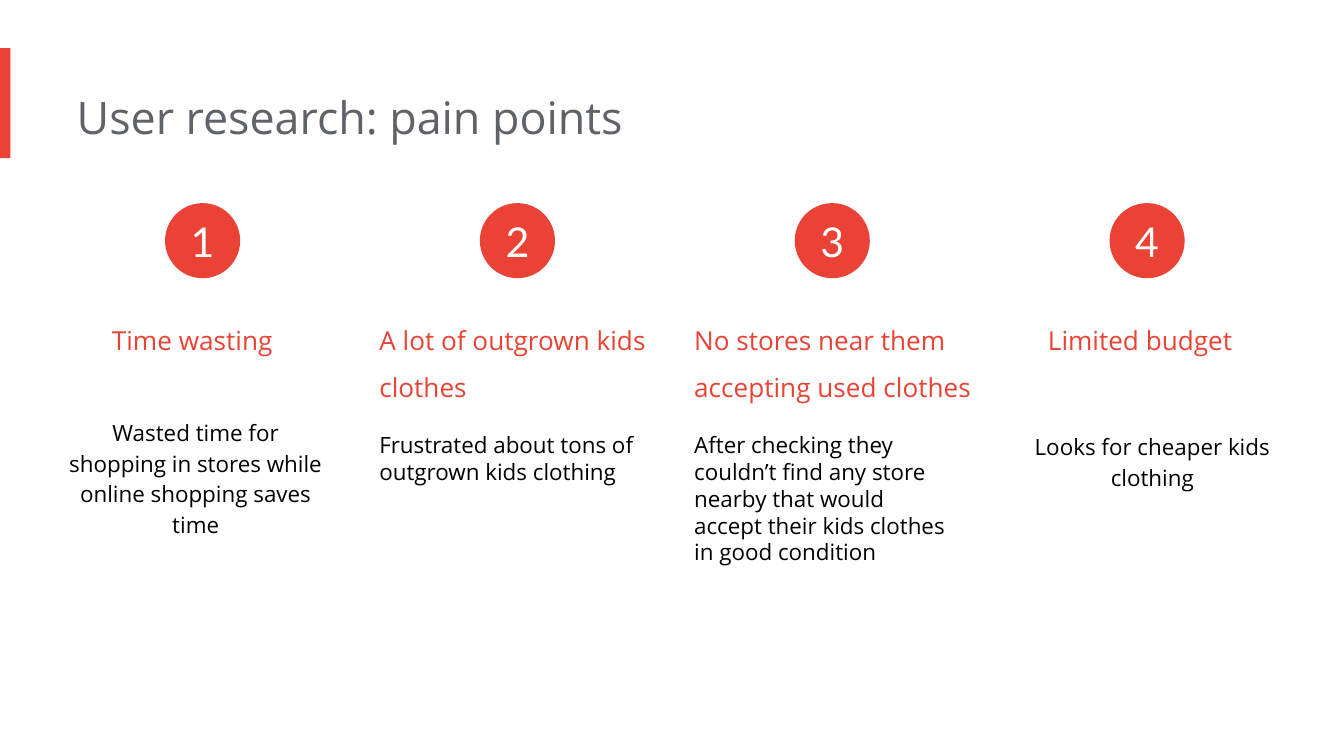
from pptx import Presentation
from pptx.dml.color import RGBColor
from pptx.enum import shapes, text
from pptx.util import Cm, Pt

RED, GREY, BLACK, WHITE = "EA4335", "5F6368", "000000", "FFFFFF"
LEFT, CENTER = text.PP_ALIGN.LEFT, text.PP_ALIGN.CENTER

TITLE = "User research: pain points"
# heading, heading width and height, body, body shift, top and height, alignment, body spacing
PAIN_POINTS = [
    ("Time wasting ", 5.21, 1.12,
     "Wasted time for shopping in stores while online shopping saves time",
     0, 7.59, 2.79, CENTER, 1.15),
    ("A lot of outgrown kids clothes", 6.3, 2,
     "Frustrated about tons of outgrown kids clothing",
     0, 7.9, 2.06, LEFT, 1),
    ("No stores near them accepting used clothes", 5.94, 2,
     "After checking they couldn’t find any store nearby that would accept "
     "their kids clothes in good condition",
     0, 7.9, 3.07, LEFT, 1),
    ("Limited budget", 5.21, 1.12,
     "Looks for cheaper kids clothing",
     0.23, 7.87, 1.63, CENTER, 1.15),
]
COLUMN_LEFT, COLUMN_STEP, BODY_WIDTH = 1.22, 5.95, 5.21
HEADING_TOP = 5.59
BADGE_SHIFT, BADGE_TOP, BADGE_SIZE = 1.9, 3.84, 1.42


def rgb(value):
    return RGBColor.from_string(value)


def write(tf, words, size, color, font="Open Sans", align=LEFT, spacing=1):
    p = tf.paragraphs[0]
    p.text = words
    p.alignment = align
    p.line_spacing = spacing
    p.font.name = font
    p.font.size = Pt(size)
    p.font.color.rgb = rgb(color)


def add_text(slide, box, *args, **kwargs):
    tf = slide.shapes.add_textbox(*map(Cm, box)).text_frame
    tf.word_wrap = True
    tf.margin_left = 0
    tf.margin_top = tf.margin_right = tf.margin_bottom = Cm(0.25)
    write(tf, *args, **kwargs)


def add_red_shape(slide, kind, box):
    sp = slide.shapes.add_shape(kind, *map(Cm, box))
    sp.shadow.inherit = False
    sp.fill.solid()
    sp.fill.fore_color.rgb = rgb(RED)
    sp.line.fill.background()
    return sp


def add_badge(slide, left, number):
    """Add a numbered circle."""
    sp = add_red_shape(slide, shapes.MSO_SHAPE.OVAL,
                       (left, BADGE_TOP, BADGE_SIZE, BADGE_SIZE))
    tf = sp.text_frame
    tf.margin_left = tf.margin_top = tf.margin_right = tf.margin_bottom = 0
    tf.vertical_anchor = text.MSO_ANCHOR.MIDDLE
    write(tf, str(number), 22, WHITE, font="Lato", align=CENTER)


def main():
    prs = Presentation()
    prs.slide_width, prs.slide_height = Cm(25.4), Cm(14.29)
    s = prs.slides.add_slide(prs.slide_layouts[6])

    add_red_shape(s, shapes.MSO_SHAPE.RECTANGLE, (0, 0.91, 0.2, 2.08))
    add_text(s, (1.45, 1.45, 17.09, 1.55), TITLE, 24, GREY)

    for i, (heading, width, height, body, shift, body_top, body_height,
            align, spacing) in enumerate(PAIN_POINTS):
        left = COLUMN_LEFT + i * COLUMN_STEP
        add_badge(s, left + BADGE_SHIFT, i + 1)
        add_text(s, (left, HEADING_TOP, width, height), heading, 14, RED,
                 align=align, spacing=1.5)
        add_text(s, (left + shift, body_top, BODY_WIDTH, body_height), body, 12, BLACK,
                 align=align, spacing=spacing)

    prs.save("out.pptx")


if __name__ == "__main__":
    main()
